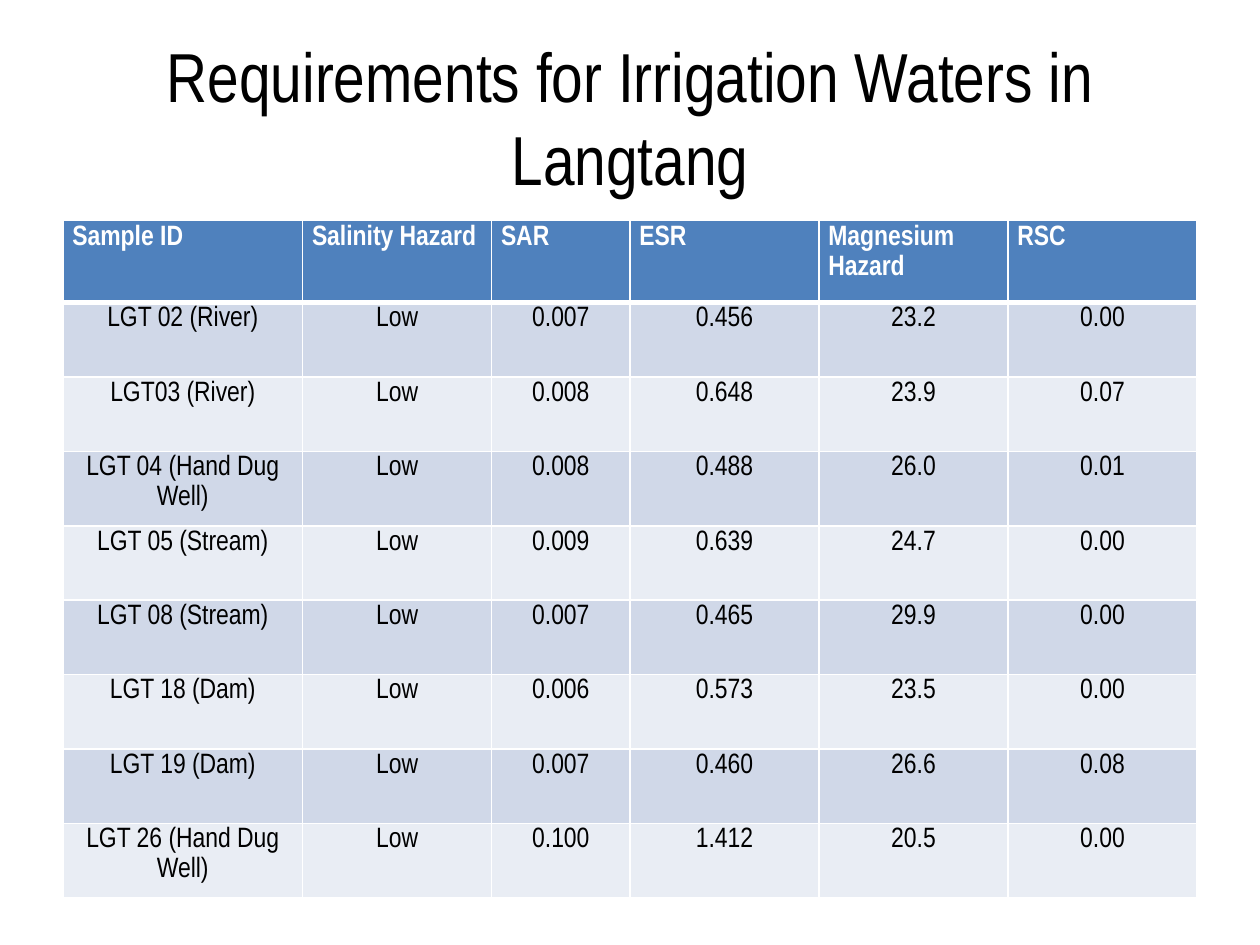
import pptx
import pptx.dml.color
import pptx.enum.text
import pptx.oxml
import pptx.oxml.ns
import pptx.util
from pptx.util import Cm

FONT = "Arial Narrow"
COLORS = {
    "text": "000000",
    "header": "4F81BD",
    "odd": "D0D8E8",
    "even": "E9EDF4",
    "white": "FFFFFF",
}
COLUMN_WIDTHS = [4.83, 3.81, 2.79, 3.81, 3.81, 3.81]
HEADER_HEIGHT = 1.65
ROW_HEIGHT = 1.5
HEADERS = ["Sample ID", "Salinity Hazard", "SAR", "ESR", "Magnesium Hazard", "RSC"]
SAMPLES = [
    ["LGT 02 (River)", "Low", "0.007", "0.456", "23.2", "0.00"],
    ["LGT03 (River)", "Low", "0.008", "0.648", "23.9", "0.07"],
    ["LGT 04 (Hand Dug Well)", "Low", "0.008", "0.488", "26.0", "0.01"],
    ["LGT 05 (Stream)", "Low", "0.009", "0.639", "24.7", "0.00"],
    ["LGT 08 (Stream)", "Low", "0.007", "0.465", "29.9", "0.00"],
    ["LGT 18 (Dam)", "Low", "0.006", "0.573", "23.5", "0.00"],
    ["LGT 19 (Dam)", "Low", "0.007", "0.460", "26.6", "0.08"],
    ["LGT 26 (Hand Dug Well)", "Low", "0.100", "1.412", "20.5", "0.00"],
]


def rgb(name):
    return pptx.dml.color.RGBColor.from_string(COLORS[name])


def add_run(p, text, size, color, bold=False):
    r = p.add_run()
    r.text = text
    r.font.name = FONT
    r.font.size = pptx.util.Pt(size)
    r.font.bold = bold
    r.font.color.rgb = rgb(color)


def add_title(s, text):
    sp = s.shapes.title
    sp.left, sp.top, sp.width, sp.height = Cm(1.27), Cm(0.76), Cm(22.86), Cm(3.18)
    tf = sp.text_frame
    tf.word_wrap = True
    tf.vertical_anchor = pptx.enum.text.MSO_ANCHOR.MIDDLE
    p = tf.paragraphs[0]
    p.alignment = pptx.enum.text.PP_ALIGN.CENTER
    add_run(p, text, 39.6, "text")


def set_borders(cell, top, bottom):
    tc_pr = cell._tc.get_or_add_tcPr()
    for side, width in (("L", 1), ("R", 1), ("T", top), ("B", bottom)):
        tc_pr.append(pptx.oxml.parse_xml(
            f'<a:ln{side} {pptx.oxml.ns.nsdecls("a")} w="{pptx.util.Pt(width)}">'
            f'<a:solidFill><a:srgbClr val="{COLORS["white"]}"/></a:solidFill>'
            f'</a:ln{side}>'))


def fill_cell(cell, text, row):
    header = row == 0
    set_borders(cell, 3 if row == 1 else 1, 3 if header else 1)
    cell.fill.solid()
    cell.fill.fore_color.rgb = rgb("header" if header else "odd" if row % 2 else "even")
    cell.margin_left = cell.margin_right = Cm(0.19)
    cell.margin_top = cell.margin_bottom = 0
    p = cell.text_frame.paragraphs[0]
    align = pptx.enum.text.PP_ALIGN
    p.alignment = align.JUSTIFY if header else align.CENTER
    p.line_spacing = 1.15
    p.space_after = pptx.util.Pt(10)
    add_run(p, text, 16, "white" if header else "text", header)


def add_water_table(s):
    rows = [HEADERS] + SAMPLES
    heights = [HEADER_HEIGHT] + [ROW_HEIGHT] * len(SAMPLES)
    table = s.shapes.add_table(
        len(rows), len(HEADERS), Cm(1.27), Cm(4.45),
        Cm(sum(COLUMN_WIDTHS)), Cm(sum(heights))).table
    for column, width in zip(table.columns, COLUMN_WIDTHS):
        column.width = Cm(width)
    for i, (values, height) in enumerate(zip(rows, heights)):
        table.rows[i].height = Cm(height)
        for j, text in enumerate(values):
            fill_cell(table.cell(i, j), text, i)


def main():
    prs = pptx.Presentation()
    prs.slide_width, prs.slide_height = Cm(25.4), Cm(19.05)
    s = prs.slides.add_slide(prs.slide_layouts[5])
    add_title(s, "Requirements for Irrigation Waters in Langtang")
    add_water_table(s)
    prs.save("out.pptx")


if __name__ == "__main__":
    main()
